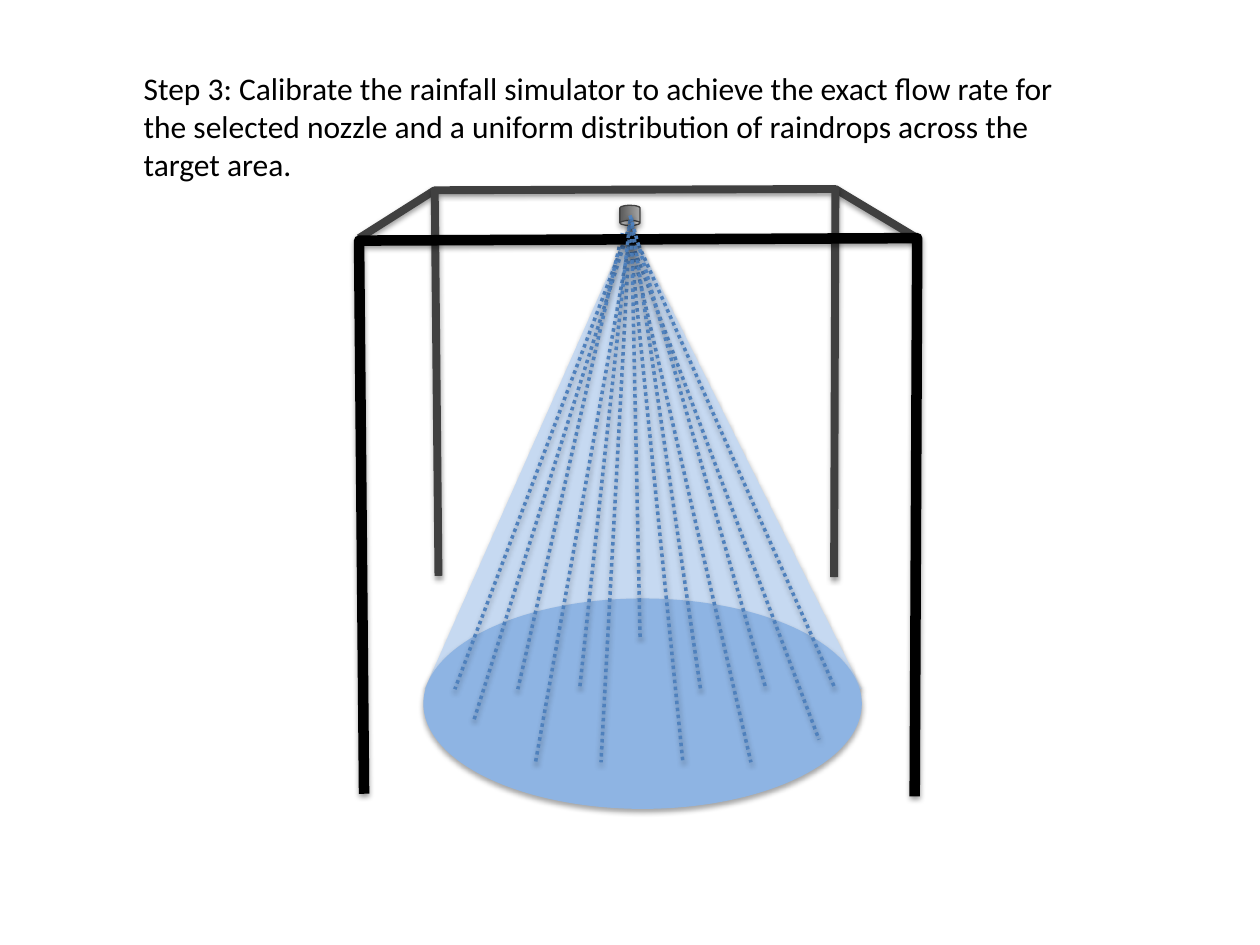
from lxml.etree import SubElement
from pptx import Presentation
from pptx.dml.color import RGBColor
from pptx.enum.dml import MSO_LINE
from pptx.enum.shapes import MSO_CONNECTOR, MSO_SHAPE
from pptx.enum.text import MSO_ANCHOR, MSO_AUTO_SIZE, PP_ALIGN
from pptx.oxml.ns import qn
from pptx.util import Emu, Pt

PX = 9144  # 100 px to the inch

BLACK = RGBColor(0x00, 0x00, 0x00)
DARK_GREY = RGBColor(0x40, 0x40, 0x40)
MID_GREY = RGBColor(0x59, 0x59, 0x59)
LIGHT_GREY = RGBColor(0xA6, 0xA6, 0xA6)
SPRAY_BLUE = RGBColor(0xC6, 0xD9, 0xF1)
TARGET_BLUE = RGBColor(0x8E, 0xB4, 0xE3)
DROP_BLUE = RGBColor(0x4F, 0x81, 0xBD)

BACK_POST = {"color": DARK_GREY, "width": 4.5}
FRONT_POST = {"color": BLACK, "width": 6}
DROPS = {"color": DROP_BLUE, "width": 2, "dash": MSO_LINE.ROUND_DOT}

STEP = ("Step 3: Calibrate the rainfall simulator to achieve the exact flow rate "
        "for the selected nozzle and a uniform distribution of raindrops across "
        "the target area.")

# Drop lines: start and end as offsets from the nozzle outlet
DROPS_BEHIND_FRAME = [
    ((0, 0), (-139, 368)), ((0, 0), (-124, 393)), ((0, 10), (150, 408)),
    ((-6, 6), (-89, 368)), ((0, 0), (163, 368)), ((0, 10), (96, 426)),
    ((0, 10), (42, 426)), ((0, 10), (-75, 426)),
]
DROPS_BEFORE_FRAME = [
    ((0, 0), (-23, 426)), ((0, -4), (-40, 368)), ((1, -6), (8, 327)),
    ((1, -6), (56, 368)), ((0, -8), (108, 368)),
]


def px(*lengths):
    return [Emu(n * PX) for n in lengths]


def add_shadow(shape, distance, opacity):
    sp_pr = shape._element.spPr
    for old in sp_pr.findall(qn("a:effectLst")):
        sp_pr.remove(old)
    effects = SubElement(sp_pr, qn("a:effectLst"))
    shadow = SubElement(effects, qn("a:outerShdw"), blurRad="40000",
                        dist=str(distance), dir="5400000", rotWithShape="0")
    color = SubElement(shadow, qn("a:srgbClr"), val="000000")
    SubElement(color, qn("a:alpha"), val=str(opacity * 1000))


def style_line(shape, color, width, dash=None):
    shape.line.color.rgb = color
    shape.line.width = Pt(width)
    if dash:
        shape.line.dash_style = dash
    add_shadow(shape, 20000, 38)


def add_line(shapes, start, end, style):
    line = shapes.add_connector(MSO_CONNECTOR.STRAIGHT, *px(*start, *end))
    style_line(line, **style)


def add_frame(shapes, left, top, points, style):
    """Two posts and the beam between them, as one open outline."""
    (x, y), *rest = [(left + dx, top + dy) for dx, dy in points]
    builder = shapes.build_freeform(x, y, scale=PX)
    builder.add_line_segments(rest, close=False)
    frame = builder.convert_to_shape()
    frame.fill.background()
    style_line(frame, **style)


def add_spray(shapes, left, top, width, height):
    """Cone of spray and the wetted target area at its foot."""
    cone = shapes.add_shape(MSO_SHAPE.ISOSCELES_TRIANGLE,
                            *px(left + 1, top, width - 1, 368))
    cone.adjustments[0] = 0.47
    target = shapes.add_shape(MSO_SHAPE.OVAL,
                              *px(left, top + height - 167, width, 167))
    for shape, color in ((cone, SPRAY_BLUE), (target, TARGET_BLUE)):
        shape.fill.solid()
        shape.fill.fore_color.rgb = color
        shape.line.fill.background()
        add_shadow(shape, 23000, 35)


def add_nozzle(shapes, left, top, size):
    nozzle = shapes.add_shape(MSO_SHAPE.CAN, *px(left, top, size, size))
    nozzle._element.spPr.xfrm.set("flipV", "1")
    nozzle.fill.gradient()
    nozzle.fill.gradient_angle = 0
    for stop, color in zip(nozzle.fill.gradient_stops, (MID_GREY, LIGHT_GREY)):
        stop.color.rgb = color
    nozzle.line.color.rgb = DARK_GREY
    nozzle.line.width = Pt(0.75)
    add_shadow(nozzle, 23000, 35)


def add_drops(shapes, x, y, rays):
    for (x1, y1), (x2, y2) in rays:
        add_line(shapes, (x + x1, y + y1), (x + x2, y + y2), DROPS)


def add_simulator(s, left, top):
    """Rainfall simulator, built from back to front."""
    shapes = s.shapes.add_group_shape().shapes
    outlet = (left + 215, top + 29)
    add_spray(shapes, left + 51, top + 29, 348, 463)
    # Side beams
    add_line(shapes, (left, top + 39), (left + 60, top + 1), BACK_POST)
    add_line(shapes, (left + 443, top + 39), (left + 378, top), BACK_POST)
    add_nozzle(shapes, left + 207, top + 13, 16)
    add_frame(shapes, left, top,
              [(63, 307), (60, 1), (378, 0), (377, 308)], BACK_POST)
    add_drops(shapes, *outlet, DROPS_BEHIND_FRAME)
    add_frame(shapes, left, top,
              [(4, 480), (0, 41), (443, 39), (441, 482)], FRONT_POST)
    add_drops(shapes, *outlet, DROPS_BEFORE_FRAME)


def add_title(s, left, top, width, height):
    title = s.shapes.title
    title.left, title.top, title.width, title.height = px(left, top, width, height)
    tf = title.text_frame
    for name, value in {"word_wrap": True, "vertical_anchor": MSO_ANCHOR.TOP,
                        "auto_size": MSO_AUTO_SIZE.SHAPE_TO_FIT_TEXT}.items():
        setattr(tf, name, value)
    p = tf.paragraphs[0]
    p.alignment = PP_ALIGN.LEFT
    r = p.add_run()
    r.text = STEP
    for name, value in {"name": "Calibri", "size": Pt(18)}.items():
        setattr(r.font, name, value)
    r.font.color.rgb = BLACK


def main():
    prs = Presentation()
    prs.slide_width, prs.slide_height = px(1000, 750)
    s = prs.slides.add_slide(prs.slide_layouts[5])
    add_simulator(s, 285, 150)
    add_title(s, 104, 50, 743, 101)
    prs.save("out.pptx")


if __name__ == "__main__":
    main()
